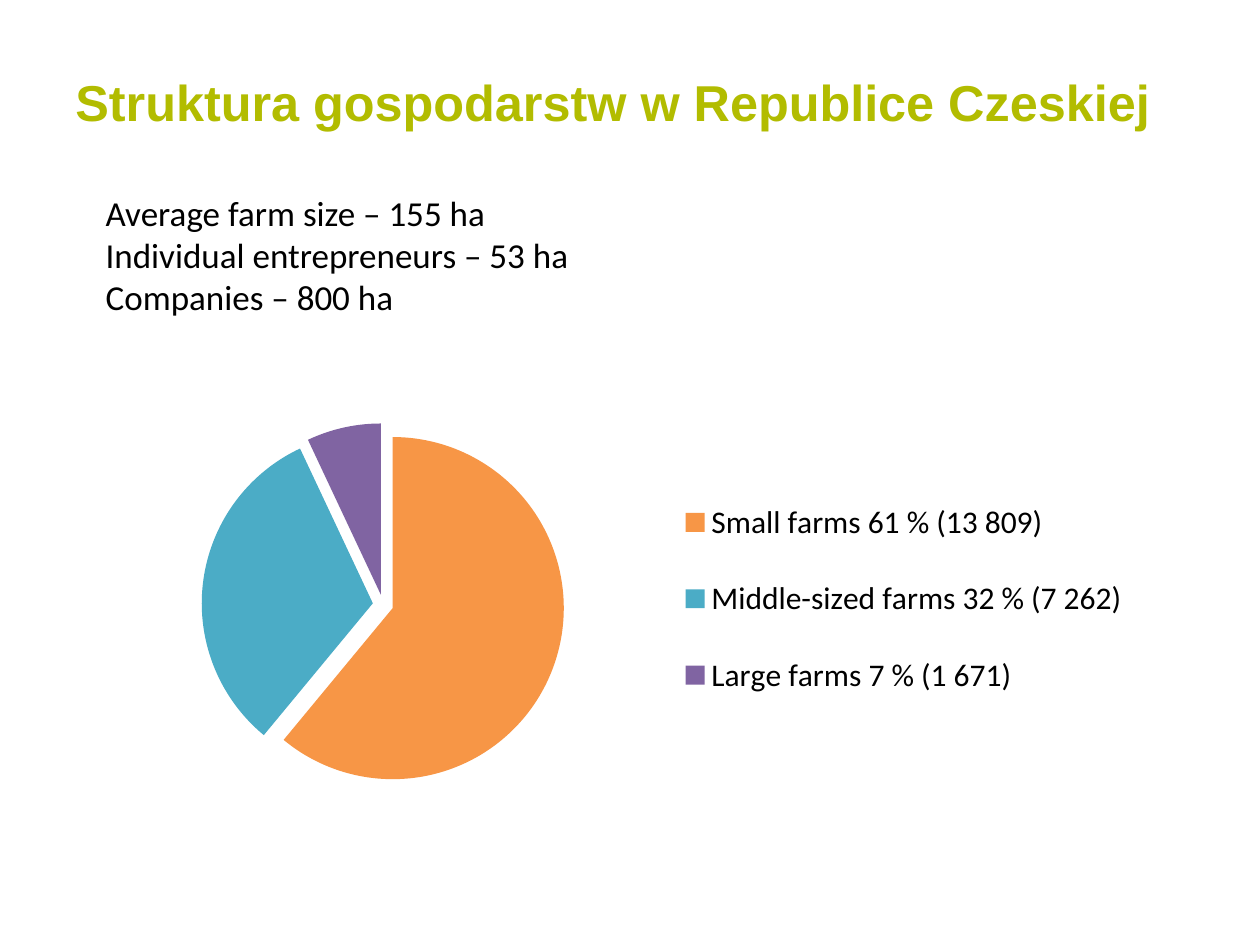
import pptx
import pptx.chart.data
import pptx.dml.color
import pptx.enum.chart
import pptx.enum.text
import pptx.oxml
import pptx.oxml.ns
import pptx.util
from pptx.util import Inches

HUES = {"title": "B2BC00", "text": "000000",
        "small": "F79646", "middle": "4BACC6", "large": "8064A2"}
FARMS = [("small", "Small farms 61 % (13 809)", 61),
         ("middle", "Middle-sized farms 32 % (7 262)", 32),
         ("large", "Large farms 7 % (1 671)", 7)]
FACTS = ["Average farm size – 155 ha",
         "Individual entrepreneurs – 53 ha",
         "Companies – 800 ha"]


def color(name):
    return pptx.dml.color.RGBColor.from_string(HUES[name])


class Deck:
    def __init__(self, wide, high):
        self.prs = pptx.Presentation()
        self.prs.slide_width, self.prs.slide_height = Inches(wide), Inches(high)
        self.slide = self.prs.slides.add_slide(self.prs.slide_layouts[6])
        self.face = "Calibri"

    def style(self, font, size, hue="text", face=None, bold=False):
        font.size = pptx.util.Pt(size)
        font.name = face or self.face
        font.bold = bold
        font.color.rgb = color(hue)

    def text(self, area, lines, anchor, **look):
        frame = self.slide.shapes.add_textbox(*map(Inches, area)).text_frame
        frame.word_wrap = True
        frame.vertical_anchor = anchor
        frame.text = "\n".join(lines)
        for par in frame.paragraphs:
            for run in par.runs:
                self.style(run.font, **look)

    def place(self, parent, area, inner=False):
        """Give a plot or legend a fixed area, in fractions of the chart."""
        for old in parent.findall(pptx.oxml.ns.qn("c:layout")):
            parent.remove(old)
        parts = '<c:layoutTarget val="inner"/>' if inner else ""
        parts += '<c:xMode val="edge"/><c:yMode val="edge"/>'
        parts += "".join(f'<c:{key} val="{val}"/>' for key, val in zip("xywh", area))
        layout = pptx.oxml.parse_xml(
            f'<c:layout {pptx.oxml.ns.nsdecls("c")}>'
            f"<c:manualLayout>{parts}</c:manualLayout></c:layout>")
        parent.insert(0 if inner else 1, layout)

    def pie(self, area, farms, plot, key, gap):
        data = pptx.chart.data.CategoryChartData()
        data.categories = [label for _, label, _ in farms]
        data.add_series("Series 1", [share for _, _, share in farms])
        chart = self.slide.shapes.add_chart(
            pptx.enum.chart.XL_CHART_TYPE.PIE, *map(Inches, area), data).chart
        chart.has_title = False
        self.style(chart.font, 18)

        # Slices, pulled apart
        chart.plots[0].vary_by_categories = True
        series = chart.plots[0].series[0]
        for index, (hue, _, _) in enumerate(farms):
            fill = series.points[index].format.fill
            fill.solid()
            fill.fore_color.rgb = color(hue)
        burst = pptx.oxml.parse_xml(
            f'<c:explosion {pptx.oxml.ns.nsdecls("c")} val="{gap}"/>')
        series._element.find(pptx.oxml.ns.qn("c:dPt")).addprevious(burst)

        # Legend and fixed areas
        chart.has_legend = True
        chart.legend.position = pptx.enum.chart.XL_LEGEND_POSITION.RIGHT
        chart.legend.include_in_layout = False
        self.style(chart.legend.font, 18)
        self.place(chart.legend._element, key)
        self.place(chart._chartSpace.chart.plotArea, plot, inner=True)

    def save(self):
        self.prs.save("out.pptx")


def main():
    anchor = pptx.enum.text.MSO_ANCHOR
    deck = Deck(10, 7.5)
    # Title
    deck.text((0.5, 0.3, 9, 1.01), ["Struktura gospodarstw w Republice Czeskiej"],
              anchor.MIDDLE, size=28.8, hue="title", face="Arial", bold=True)
    # Farm structure
    deck.pie((0.74, 2.18, 8.52, 4.72), FARMS, plot=(0.03, 0.25, 0.48, 0.61),
             key=(0.53, 0.32, 0.45, 0.45), gap=6)
    # Farm sizes
    deck.text((0.74, 1.47, 7.96, 1.41), FACTS, anchor.TOP, size=20)
    deck.save()


if __name__ == "__main__":
    main()
